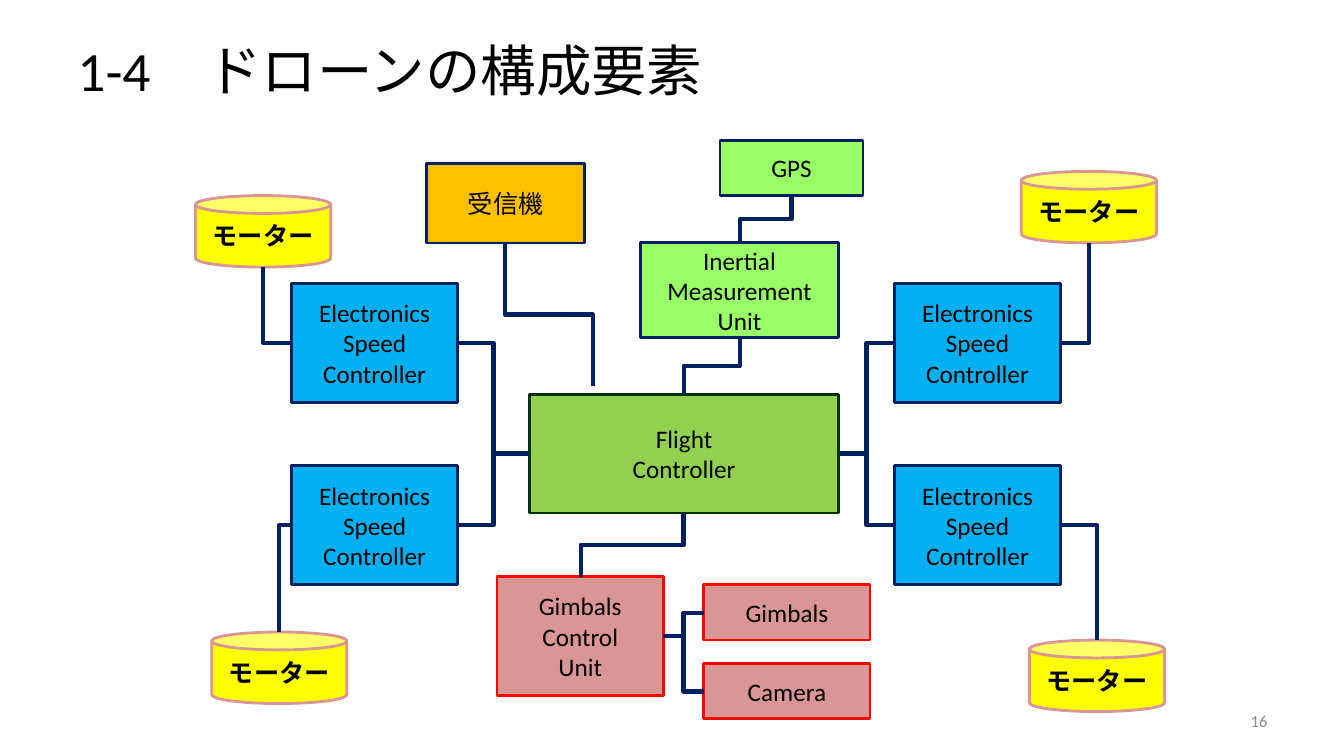
from lxml import etree
from pptx import Presentation
from pptx.dml.color import RGBColor
from pptx.enum.shapes import MSO_CONNECTOR, MSO_SHAPE as SHAPE
from pptx.enum.text import MSO_ANCHOR as ANCHOR, PP_ALIGN as ALIGN
from pptx.oxml.ns import qn
from pptx.util import Inches, Pt

rgb = RGBColor.from_string
NAVY, RED = "002060", "FF0000"
BLUE, GREEN, LIME, PINK = "00B0F0", "92D050", "99FF66", "D99694"

prs = Presentation()
prs.slide_width, prs.slide_height = Inches(13.33), Inches(7.5)
slide = prs.slides.add_slide(prs.slide_layouts[6])


def box(x, y, w, h, lines, fill, line, kind=SHAPE.RECTANGLE):
    s = slide.shapes.add_shape(kind, Inches(x), Inches(y), Inches(w), Inches(h))
    s.shadow.inherit = False
    s.fill.solid()
    s.fill.fore_color.rgb = rgb(fill)
    s.line.color.rgb = rgb(line)
    s.line.width = Pt(2)
    tf = s.text_frame
    tf.vertical_anchor = ANCHOR.MIDDLE
    for i, text in enumerate(lines):
        p = tf.add_paragraph() if i else tf.paragraphs[0]
        p.alignment = ALIGN.CENTER
        r = p.add_run()
        r.text = text
        r.font.name, r.font.size = "Calibri", Pt(18)
        r.font.bold = kind == SHAPE.CAN
        r.font.color.rgb = rgb("000000")


def elbow(x1, y1, x2, y2, kind="bentConnector3", upright=False):
    if upright:  # leaves vertically: lay the path flat, then turn it by 90 degrees
        cx, cy, dx, dy = (x1 + x2) / 2, (y1 + y2) / 2, x2 - x1, y2 - y1
        x1, y1, x2, y2 = cx - dy / 2, cy + dx / 2, cx + dy / 2, cy - dx / 2
    c = slide.shapes.add_connector(MSO_CONNECTOR.ELBOW, Inches(x1), Inches(y1),
                                   Inches(x2), Inches(y2))
    c.line.color.rgb = rgb(NAVY)
    c.line.width = Pt(3)
    sp_pr = c._element.spPr
    sp_pr.find(qn("a:prstGeom")).set("prst", kind)
    if upright:
        sp_pr.find(qn("a:xfrm")).set("rot", "5400000")
    etree.SubElement(sp_pr, qn("a:effectLst"))


# Title and page number
for x, y, w, h, text, size, color, align in [
    (0.67, 0.3, 12, 0.77, "1-4　ドローンの構成要素", 39.6, "000000", ALIGN.LEFT),
    (9.56, 6.95, 3.11, 0.4, "16", 12, "8C8C8C", ALIGN.RIGHT),
]:
    tf = slide.shapes.add_textbox(Inches(x), Inches(y), Inches(w), Inches(h)).text_frame
    tf.word_wrap = True
    tf.vertical_anchor = ANCHOR.MIDDLE
    p = tf.paragraphs[0]
    p.alignment = align
    r = p.add_run()
    r.text = text
    r.font.name, r.font.size = "Calibri", Pt(size)
    r.font.color.rgb = rgb(color)

# Flight controller
box(5.25, 3.91, 3.07, 1.18, ["Flight", "Controller"], GREEN, "003300")

# Speed controllers, each with its motor: left, top, motor left, motor top
for x, y, motor_x, motor_y in [
    (8.87, 2.81, 10.13, 1.7),
    (8.87, 4.62, 10.21, 6.35),
    (2.89, 2.81, 1.94, 1.94),
    (2.89, 4.62, 2.1, 6.27),
]:
    box(x, y, 1.65, 1.18, ["Electronics", "Speed", "Controller"], BLUE, NAVY)
    box(motor_x, motor_y, 1.34, 0.71, ["モーター"], "FFFF00", PINK, SHAPE.CAN)
    middle = y + 0.59
    on_right = x > 6
    outer, inner, hub = (x + 1.65, x, 8.32) if on_right else (x, x + 1.65, 5.25)
    motor_edge = motor_y if motor_y > y else motor_y + 0.71
    elbow(outer, middle, motor_x + 0.67, motor_edge, "bentConnector2")
    elbow(hub, 4.5, inner, middle)

# Gimbals
box(4.93, 5.72, 1.65, 1.18, ["Gimbals", "Control", "Unit"], PINK, RED)
elbow(6.78, 5.09, 5.76, 5.72, upright=True)
for y, name in [(5.8, "Gimbals"), (6.58, "Camera")]:
    box(6.98, y, 1.65, 0.55, [name], PINK, RED)
    elbow(6.58, 6.31, 6.98, y + 0.28)

# Sensors
box(6.35, 2.41, 1.97, 0.94, ["Inertial", "Measurement", "Unit"], LIME, NAVY)
box(7.14, 1.39, 1.42, 0.55, ["GPS"], LIME, NAVY)
elbow(7.34, 3.35, 6.78, 3.91, upright=True)
elbow(7.85, 1.94, 7.34, 2.41, upright=True)

# Receiver
box(4.23, 1.62, 1.57, 0.79, ["受信機"], "FFC000", NAVY)
elbow(5.01, 2.41, 5.88, 3.83, upright=True)

prs.save("out.pptx")
